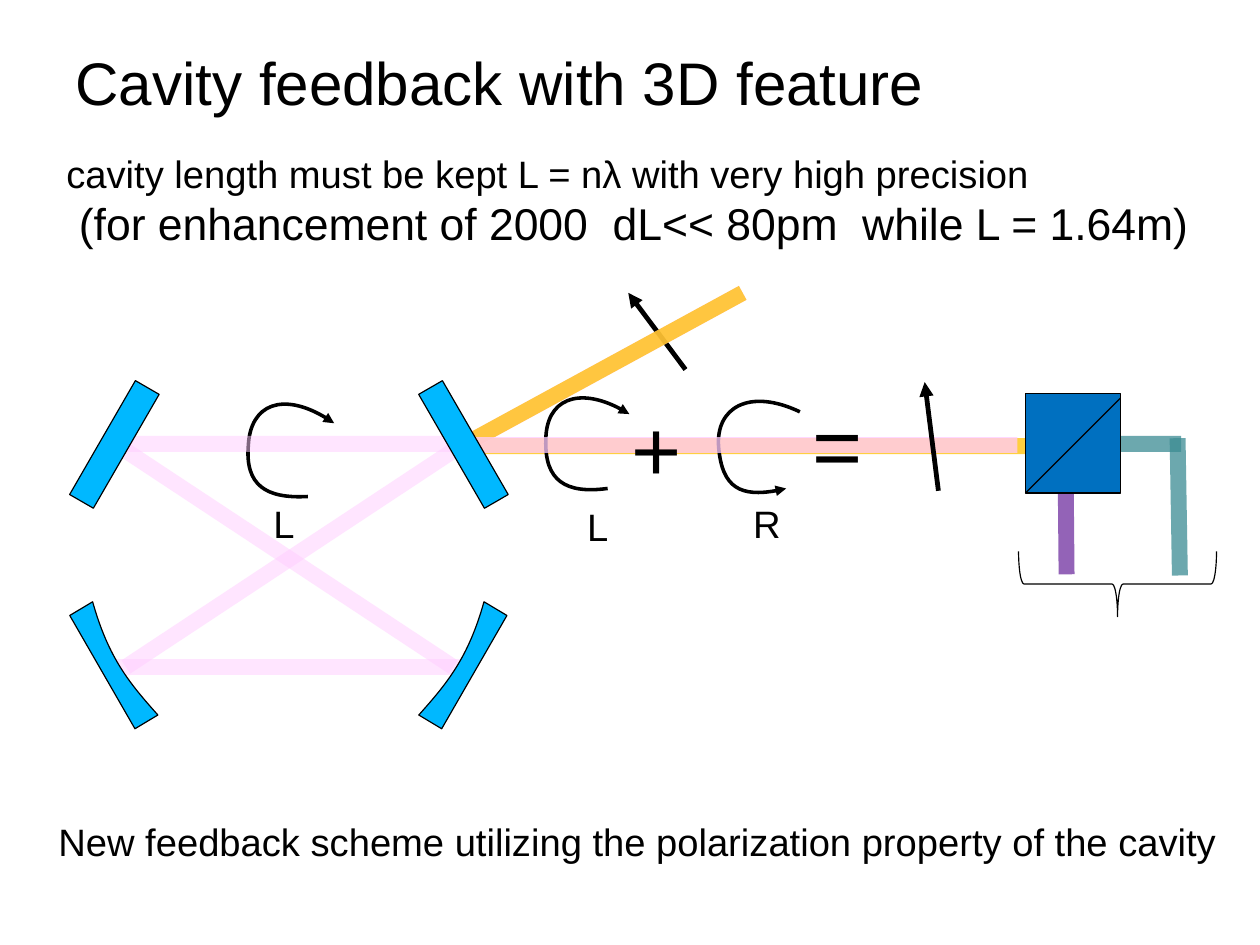
from lxml.etree import Element, SubElement
from pptx import Presentation
from pptx.dml.color import RGBColor as Rgb
from pptx.enum.shapes import MSO_CONNECTOR as Conn, MSO_SHAPE as Form
from pptx.enum.text import MSO_ANCHOR as Anchor, MSO_AUTO_SIZE as Auto, PP_ALIGN as Align
from pptx.oxml.ns import qn
from pptx.util import Inches, Pt

COLORS = {
    "black": "000000", "pink": "FFCCFF", "gold": "FFC000", "teal": "3C8C93",
    "purple": "7030A0", "cube": "0070C0", "mirror": "00B8FF",
}


class Deck:
    """Holds the style and the current slide, and draws each kind of element."""

    def __init__(self, wide, high):
        self.font = "Arial"
        self.prs = Presentation()
        self.prs.slide_width, self.prs.slide_height = Inches(wide), Inches(high)
        self.slide = self.prs.slides.add_slide(self.prs.slide_layouts[1])
        self.shapes = self.slide.shapes

    def color(self, name):
        return Rgb.from_string(COLORS[name])

    def place(self, shape, box):
        shape.left, shape.top, shape.width, shape.height = map(Inches, box)

    def letter(self, shape, lines, side=0.06, anchor=Anchor.TOP):
        frame = shape.text_frame
        frame.word_wrap, frame.auto_size = True, Auto.NONE
        frame.vertical_anchor = anchor
        frame.margin_left = frame.margin_right = Inches(side)
        frame.margin_top = frame.margin_bottom = Inches(0.06)
        for i, (text, size, indent) in enumerate(lines):
            para = frame.add_paragraph() if i else frame.paragraphs[0]
            para.text = text
            props = para._p.get_or_add_pPr()
            props.set("marL", str(Inches(indent)))
            props.set("indent", "0")
            SubElement(props, qn("a:buNone"))
            para.alignment = Align.LEFT
            para.space_before = Pt(0)
            para.font.name, para.font.size = self.font, Pt(size)
            para.font.color.rgb = self.color("black")

    def title(self, box, text, size):
        shape = self.shapes.title
        self.place(shape, box)
        self.letter(shape, [(text, size, 0)], 0.11, Anchor.MIDDLE)

    def body(self, box, lines):
        shape = self.slide.placeholders[1]
        self.place(shape, box)
        self.letter(shape, lines)

    def label(self, box, text, size=24):
        shape = self.shapes.add_textbox(*map(Inches, box))
        self.letter(shape, [(text, size, 0)])

    def stroke(self, shape, name, width, alpha=100, end=None):
        shape.line.color.rgb = self.color(name)
        shape.line.width = Pt(width)
        line = shape.element.spPr.find(qn("a:ln"))
        if alpha < 100:
            tint = line.find(".//" + qn("a:srgbClr"))
            SubElement(tint, qn("a:alpha"), val=str(alpha * 1000))
        if end:
            SubElement(line, qn("a:" + end), type="triangle")

    def line(self, start, stop, name="black", width=0.75, alpha=100, end=None):
        shape = self.shapes.add_connector(Conn.STRAIGHT, *map(Inches, start + stop))
        self.stroke(shape, name, width, alpha, end)
        SubElement(shape.element.spPr, qn("a:effectLst"))

    def beam(self, start, stop, name="pink", alpha=75):
        self.line(start, stop, name, 10, alpha)

    def paint(self, shape, fill):
        shape.shadow.inherit = False
        if fill:
            shape.fill.solid()
            shape.fill.fore_color.rgb = self.color(fill)
        else:
            shape.fill.background()

    def block(self, form, box, fill=None, turn=0):
        shape = self.shapes.add_shape(form, *map(Inches, box))
        shape.rotation = turn
        self.paint(shape, fill)
        self.stroke(shape, "black", 0.75)

    def curve(self, start, parts, fill=None, width=2.25, end=None):
        build = self.shapes.build_freeform(*map(Inches, start))
        dots = [tuple(map(Inches, part[i:i + 2]))
                for part in parts for i in range(0, len(part), 2)]
        build.add_line_segments(dots, close=bool(fill))
        shape = build.convert_to_shape()
        steps = iter(shape.element.findall(".//" + qn("a:lnTo")))
        for part in parts:
            nodes = [next(steps) for _ in range(len(part) // 2)]
            if len(nodes) == 3:
                bend = Element(qn("a:cubicBezTo"))
                nodes[0].addprevious(bend)
                for node in nodes:
                    bend.append(node[0])
                    node.getparent().remove(node)
        self.paint(shape, fill)
        self.stroke(shape, "black", width, end=end)


def main():
    deck = Deck(11.01, 8.26)
    deck.title((0.55, 0.33, 9.92, 0.77), "Cavity feedback with 3D feature", 37.8)
    deck.body((0.52, 1.25, 10.13, 0.98), [
        ("cavity length must be kept L = nλ with very high precision", 24, 0),
        ("(for enhancement of 2000  dL<< 80pm  while L = 1.64m)", 28, 0.11),
    ])

    deck.beam((3.96, 3.94), (1.1, 5.83), alpha=50)
    deck.beam((4.06, 5.83), (0.98, 5.83), alpha=50)
    deck.beam((3.96, 5.83), (1.1, 3.94), alpha=50)
    deck.line((5.99, 3.23), (5.49, 2.56), width=3, end="tailEnd")
    deck.curve((2.69, 4.34), [(2.32, 4.36, 2.14, 4.24, 2.17, 3.89),
                              (2.19, 3.53, 2.51, 3.41, 2.92, 3.7)], end="tailEnd")
    deck.beam((9.01, 3.9), (3.96, 3.9), "gold")
    deck.beam((3.96, 3.94), (6.49, 2.56))
    deck.beam((6.49, 2.56), (4.16, 3.83), "gold")
    deck.label((0.45, 7.09, 10.41, 0.91),
               "New feedback scheme utilizing the polarization property of the cavity")

    deck.beam((10.32, 3.88), (9.68, 3.88), "teal")
    deck.beam((9.31, 3.94), (9.32, 5.02), "purple")
    deck.block(Form.RECTANGLE, (8.96, 3.44, 0.83, 0.87), "cube")
    deck.line((8.96, 4.31), (9.79, 3.48))
    deck.beam((10.29, 3.83), (10.31, 5.03), "teal")
    deck.block(Form.RIGHT_BRACE, (9.48, 4.24, 0.57, 1.73), turn=90)

    deck.label((2.33, 4.31, 0.39, 0.51), "L")
    deck.curve((5.31, 4.27), [(4.94, 4.32, 4.76, 4.2, 4.77, 3.85),
                              (4.77, 3.49, 5.09, 3.36, 5.5, 3.62)], end="tailEnd")
    deck.label((5.07, 4.34, 0.39, 0.51), "L")
    deck.label((6.52, 4.31, 0.45, 0.51), "R")
    deck.beam((4.13, 3.88), (1.05, 3.88), alpha=50)
    deck.curve((6.87, 4.27), [(6.51, 4.36, 6.31, 4.27, 6.28, 3.91),
                              (6.25, 3.56, 6.55, 3.39, 6.99, 3.6)], end="headEnd")
    deck.beam((4.04, 3.89), (8.89, 3.89))
    deck.label((5.46, 3.4, 0.64, 1.01), "+", 54)
    deck.line((8.2, 4.29), (8.08, 3.34), width=3, end="tailEnd")
    deck.label((7.04, 3.36, 0.64, 1.01), "=", 54)

    bowl = [(0.61, 5.38), (0.81, 5.26), (0.95, 5.76, 1.14, 5.98, 1.38, 6.25), (1.18, 6.37)]
    flip = [tuple(5.04 - v if i % 2 == 0 else v for i, v in enumerate(part))
            for part in bowl]
    for left, turn, edge in ((0.88, 30, bowl), (3.93, 330, flip)):
        deck.block(Form.RECTANGLE, (left, 3.31, 0.24, 1.15), "mirror", turn)
        deck.curve(edge[0], edge[1:], "mirror", 0.75)

    deck.prs.save("out.pptx")


if __name__ == "__main__":
    main()
